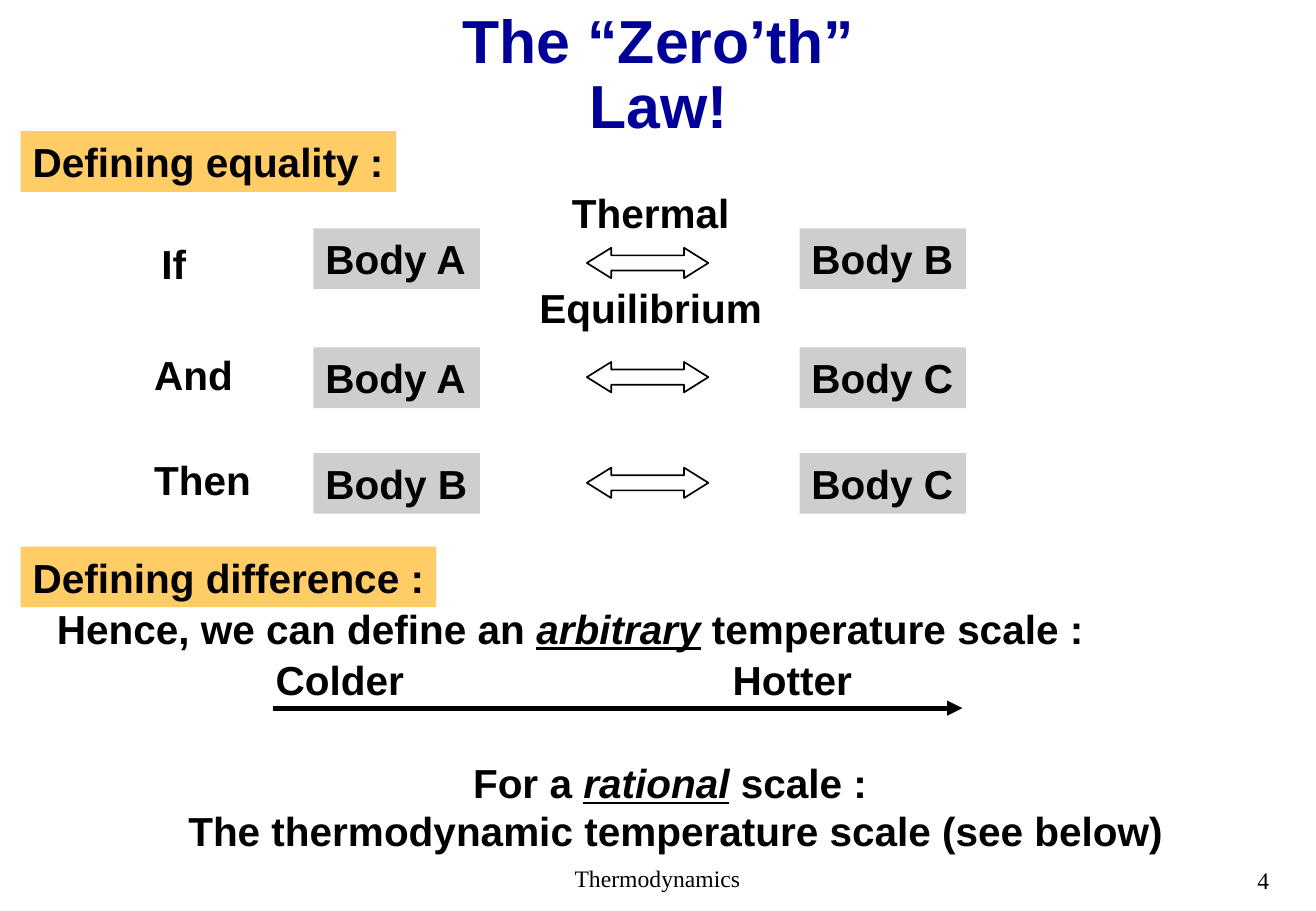
"""Build the slide that introduces the zeroth law of thermodynamics."""
from dataclasses import dataclass
from typing import Optional

import lxml.etree
import pptx
import pptx.dml.color
import pptx.enum.shapes
import pptx.enum.text
import pptx.oxml.ns
import pptx.util

Inches = pptx.util.Inches
Align = pptx.enum.text.PP_ALIGN
Shape = pptx.enum.shapes.MSO_SHAPE


@dataclass(frozen=True)
class Theme:
    ink: str = "000000"
    title: str = "000099"
    body: str = "CECECE"
    heading: str = "FFCC66"
    sans: str = "Arial"
    serif: str = "Times New Roman"
    title_size: float = 36
    text_size: float = 24
    footer_size: float = 14
    blank_line: float = 27.6
    outline: float = 1
    axis: float = 3


THEME = Theme()


@dataclass(frozen=True)
class Span:
    text: str
    stressed: bool = False


@dataclass(frozen=True)
class Label:
    left: float
    top: float
    width: float
    lines: tuple[tuple[Span, ...], ...]
    height: float = 0.5
    fill: Optional[str] = None
    align: Align = Align.LEFT
    gap: float = 0
    footer: bool = False


@dataclass(frozen=True)
class Relation:
    word: str
    word_left: float
    word_top: float
    word_width: float
    first: str
    second: str
    box_top: float
    arrow_top: float


def line(text: str) -> tuple[tuple[Span, ...], ...]:
    return ((Span(text),),)


RELATIONS = (
    Relation("If", 1.23, 1.92, 0.5, "Body A", "Body B", 1.88, 2.04),
    Relation("And", 1.17, 2.83, 0.85, "Body A", "Body C", 2.86, 2.98),
    Relation("Then", 1.17, 3.7, 1, "Body B", "Body C", 3.73, 3.85),
)

LABELS = (
    Label(4.63, 7.06, 1.58, line("Thermodynamics"), 0.34, footer=True),
    Label(10.25, 7.08, 0.43, line("4"), 0.33, footer=True),
    Label(4.34, 1.5, 2.03, line("Thermal") + line("Equilibrium"), 1.3,
          align=Align.CENTER, gap=THEME.blank_line),
    Label(0.17, 1.08, 3.09, line("Defining equality :"), fill=THEME.heading),
    Label(0.37, 4.92, 8.65, ((Span("Hence, we can define an "), Span("arbitrary", True),
                              Span(" temperature scale :")),)),
    Label(2.17, 5.34, 1.26, line("Colder")),
    Label(5.93, 5.34, 1.18, line("Hotter"), align=Align.RIGHT),
    Label(1.45, 6.19, 8.22,
          ((Span("For a "), Span("rational", True), Span(" scale : ")),
           (Span("The thermodynamic temperature scale (see below)"),)),
          0.9, align=Align.CENTER),
    Label(0.17, 4.5, 3.42, line("Defining difference :"), fill=THEME.heading),
)


def rgb(value: str) -> pptx.dml.color.RGBColor:
    return pptx.dml.color.RGBColor.from_string(value)


def style(font, size: float, color: str, name: str, bold: bool) -> None:
    font.size = pptx.util.Pt(size)
    font.color.rgb = rgb(color)
    font.name = name
    font.bold = bold


def add_title(slide, text: str) -> None:
    title = slide.shapes.title
    title.left, title.top = Inches(3.07), Inches(0.31)
    title.width, title.height = Inches(4.7), Inches(0.64)
    frame = title.text_frame
    frame.word_wrap = False
    frame.vertical_anchor = pptx.enum.text.MSO_ANCHOR.MIDDLE
    para = frame.paragraphs[0]
    para.alignment = Align.CENTER
    para.line_spacing = 0.9
    span = para.add_run()
    span.text = text
    style(span.font, THEME.title_size, THEME.title, THEME.sans, True)


def add_label(slide, label: Label) -> None:
    place = [Inches(n) for n in (label.left, label.top, label.width, label.height)]
    if label.fill:
        box = slide.shapes.add_shape(Shape.RECTANGLE, *place)
        box.shadow.inherit = False
        box.fill.solid()
        box.fill.fore_color.rgb = rgb(label.fill)
        box.line.fill.background()
    else:
        box = slide.shapes.add_textbox(*place)
    frame = box.text_frame
    frame.word_wrap = False
    frame.auto_size = pptx.enum.text.MSO_AUTO_SIZE.SHAPE_TO_FIT_TEXT
    frame.vertical_anchor = pptx.enum.text.MSO_ANCHOR.TOP
    for index, spans in enumerate(label.lines):
        para = frame.add_paragraph() if index else frame.paragraphs[0]
        para.alignment = label.align
        if index and label.gap:
            para.space_before = pptx.util.Pt(label.gap)
        for part in spans:
            span = para.add_run()
            span.text = part.text
            if label.footer:
                style(span.font, THEME.footer_size, THEME.ink, THEME.serif, False)
            else:
                style(span.font, THEME.text_size, THEME.ink, THEME.sans, True)
            if part.stressed:
                span.font.italic = span.font.underline = True


def add_relation(slide, relation: Relation) -> None:
    add_label(slide, Label(relation.word_left, relation.word_top, relation.word_width,
                           line(relation.word)))
    for left, name in ((2.58, relation.first), (6.58, relation.second)):
        add_label(slide, Label(left, relation.box_top, 1.37, line(name), fill=THEME.body))
    arrow = slide.shapes.add_shape(Shape.LEFT_RIGHT_ARROW, Inches(4.83),
                                   Inches(relation.arrow_top), Inches(1), Inches(0.25))
    arrow.adjustments[0], arrow.adjustments[1] = 0.5, 0.8
    arrow.shadow.inherit = False
    arrow.fill.background()
    arrow.line.color.rgb = rgb(THEME.ink)
    arrow.line.width = pptx.util.Pt(THEME.outline)


def add_temperature_axis(slide) -> None:
    axis = slide.shapes.add_connector(pptx.enum.shapes.MSO_CONNECTOR.STRAIGHT,
                                      Inches(2.25), Inches(5.83), Inches(7.92), Inches(5.83))
    axis.line.color.rgb = rgb(THEME.ink)
    axis.line.width = pptx.util.Pt(THEME.axis)
    qn = pptx.oxml.ns.qn
    properties = axis.element.spPr
    lxml.etree.SubElement(properties.find(qn("a:ln")), qn("a:tailEnd"), type="triangle")
    lxml.etree.SubElement(properties, qn("a:effectLst"))


def main() -> None:
    deck = pptx.Presentation()
    deck.slide_width, deck.slide_height = Inches(10.83), Inches(7.5)
    page = deck.slides.add_slide(deck.slide_layouts.get_by_name("Title Only"))
    add_title(page, "The “Zero’th” Law!")
    for relation in RELATIONS:
        add_relation(page, relation)
    for label in LABELS:
        add_label(page, label)
    add_temperature_axis(page)
    deck.save("out.pptx")


if __name__ == "__main__":
    main()
